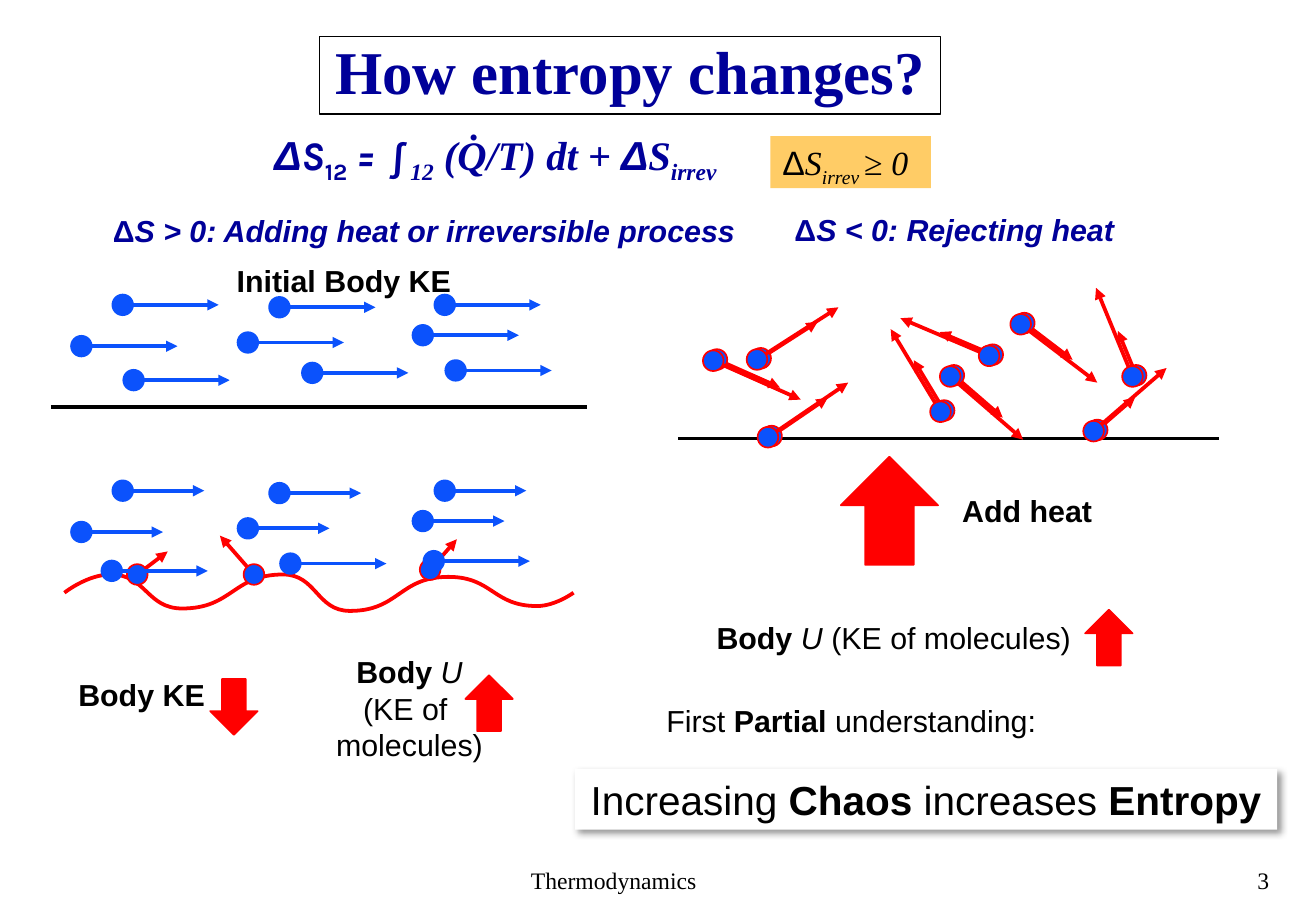
"""Build the slide on how entropy changes, with moving molecules above a surface."""
from dataclasses import dataclass
from functools import partial
from itertools import pairwise
from typing import NamedTuple, Optional

from lxml import etree
from pptx import Presentation
from pptx import util as u
from pptx.dml import color
from pptx.enum import shapes, text
from pptx.oxml import ns


@dataclass(frozen=True)
class Theme:
    black: str = "000000"
    white: str = "FFFFFF"
    navy: str = "000099"
    amber: str = "FFCC66"
    blue: str = "0B52FC"
    red: str = "FF0000"
    sans: str = "Arial"
    serif: str = "Times New Roman"
    rounded: str = "Karla"
    footer: int = 14
    label: int = 18
    condition: int = 20
    formula: int = 24
    title: int = 36
    thin: float = 1
    thick: float = 2.25
    dot: float = 0.17


THEME = Theme()


class Run(NamedTuple):
    words: str
    bold: bool = False
    italic: bool = False
    subscript: bool = False
    face: str = THEME.sans


class Point(NamedTuple):
    x: float
    y: float


class Molecule(NamedTuple):
    x: float
    y: float
    reach_x: float
    reach_y: float = 0

    def moved(self, right: float, down: float, speed: float = 1) -> "Molecule":
        return Molecule(self.x + right, self.y + down, self.reach_x * speed, self.reach_y * speed)


class Heating(NamedTuple):
    hot: Molecule
    cold_speed: float


class BlockArrow(NamedTuple):
    kind: shapes.MSO_SHAPE
    left: float
    top: float
    width: float = 0.39
    height: float = 0.46


@dataclass(frozen=True)
class Label:
    left: float
    top: float
    width: float
    height: float
    paragraphs: list[list[Run]]
    size: int = THEME.label
    ink: str = THEME.black
    centred: bool = False
    fill: Optional[str] = None
    border: Optional[str] = None
    middle: bool = False
    spacing: Optional[float] = None
    raised: bool = False


def rgb(value: str) -> color.RGBColor:
    return color.RGBColor.from_string(value)


def paint(shape, fill: Optional[str], border: Optional[str], width: float = THEME.thin) -> None:
    shape.shadow.inherit = False
    if fill:
        shape.fill.solid()
        shape.fill.fore_color.rgb = rgb(fill)
    else:
        shape.fill.background()
    if border:
        shape.line.color.rgb = rgb(border)
        shape.line.width = u.Pt(width)
    else:
        shape.line.fill.background()


def add_shadow(shape) -> None:
    effects = shape._element.spPr.find(ns.qn("a:effectLst"))
    shadow = etree.SubElement(effects, ns.qn("a:outerShdw"), blurRad=str(u.Pt(4)),
                              dist=str(u.Pt(3)), dir="2700000", algn="tl", rotWithShape="0")
    tone = etree.SubElement(shadow, ns.qn("a:srgbClr"), val=THEME.black)
    etree.SubElement(tone, ns.qn("a:alpha"), val="40000")


def add_label(slide, label: Label) -> None:
    frame = map(u.Inches, (label.left, label.top, label.width, label.height))
    if label.fill or label.border:
        box = slide.shapes.add_shape(shapes.MSO_SHAPE.RECTANGLE, *frame)
        paint(box, label.fill, label.border)
    else:
        box = slide.shapes.add_textbox(*frame)
    if label.raised:
        add_shadow(box)
    body = box.text_frame
    body.word_wrap = False
    body.auto_size = text.MSO_AUTO_SIZE.SHAPE_TO_FIT_TEXT
    body.vertical_anchor = text.MSO_ANCHOR.MIDDLE if label.middle else text.MSO_ANCHOR.TOP
    for index, runs in enumerate(label.paragraphs):
        paragraph = body.add_paragraph() if index else body.paragraphs[0]
        paragraph.alignment = text.PP_ALIGN.CENTER if label.centred else text.PP_ALIGN.LEFT
        paragraph.line_spacing = label.spacing
        for part in runs:
            run = paragraph.add_run()
            run.text = part.words
            run.font.name, run.font.size = part.face, u.Pt(label.size)
            run.font.bold, run.font.italic = part.bold, part.italic
            run.font.color.rgb = rgb(label.ink)
            if part.subscript:
                run._r.get_or_add_rPr().set("baseline", "-25000")


def add_line(slide, start: Point, end: Point, ink: str, arrow: bool = False) -> None:
    line = slide.shapes.add_connector(
        shapes.MSO_CONNECTOR.STRAIGHT, *map(u.Inches, (*start, *end)))
    line.line.color.rgb = rgb(ink)
    line.line.width = u.Pt(THEME.thick)
    if arrow:
        etree.SubElement(line.line._get_or_add_ln(), ns.qn("a:tailEnd"), type="triangle")
    etree.SubElement(line._element.spPr, ns.qn("a:effectLst"))


def add_molecule(slide, molecule: Molecule, ink: str) -> None:
    x, y, reach_x, reach_y = molecule
    add_line(slide, Point(x, y), Point(x + reach_x, y + reach_y), ink, arrow=True)
    corner = (x - THEME.dot / 2, y - THEME.dot / 2)
    dot = slide.shapes.add_shape(
        shapes.MSO_SHAPE.OVAL, *map(u.Inches, (*corner, THEME.dot, THEME.dot)))
    paint(dot, THEME.blue, ink)


def add_wave(slide, turns: list[Point], ink: str) -> None:
    """Join crests and troughs with curves that are level at each inner turn."""
    controls: list[Point] = []
    for start, end in pairwise(turns):
        half = (end.x - start.x) / 2
        leave = start if start == turns[0] else Point(start.x + half, start.y)
        arrive = end if end == turns[-1] else Point(end.x - half, end.y)
        controls += [leave, arrive, end]
    builder = slide.shapes.build_freeform(*map(u.Inches, turns[0]))
    builder.add_line_segments([tuple(map(u.Inches, point)) for point in controls], close=False)
    wave = builder.convert_to_shape()
    paint(wave, None, ink, THEME.thick)
    outline = next(wave._element.iter(ns.qn("a:path")))
    segments = outline.findall(ns.qn("a:lnTo"))
    for first in range(0, len(segments), 3):
        bezier = etree.SubElement(outline, ns.qn("a:cubicBezTo"))
        for segment in segments[first:first + 3]:
            bezier.append(segment[0])
            outline.remove(segment)


def add_block_arrow(slide, arrow: BlockArrow) -> None:
    block = slide.shapes.add_shape(arrow.kind, *map(u.Inches, arrow[1:]))
    paint(block, THEME.red, THEME.red)


COOL_FLOOR = (Point(0.42, 3.35), Point(4.83, 3.35))
HOT_FLOOR = (Point(5.58, 3.61), Point(10.03, 3.61))

FREE_FLOW = [Molecule(x, y, 0.79) for x, y in [
    (0.67, 2.85), (1.01, 2.51), (2.04, 2.82), (2.3, 2.53), (3.48, 2.76), (3.66, 2.51)]]
FLOW_AT_FLOOR = [Molecule(x, y, 0.79) for x, y in [(1.1, 3.13), (2.57, 3.07), (3.75, 3.05)]]
SLOWED_FLOW = [molecule.moved(0, 1.53, speed=0.85) for molecule in FREE_FLOW]
FLOW_AT_WAVE = [molecule.moved(-0.18, 1.57) for molecule in FLOW_AT_FLOOR]

WAVE_TURNS = [Point(0.53, 4.88), Point(0.91, 4.73), Point(1.5, 5.01), Point(2.33, 4.73),
              Point(2.88, 5.03), Point(3.69, 4.75), Point(4.42, 4.99), Point(4.72, 4.88)]
WAVE_MOLECULES = [Molecule(3.54, 4.69, 0.22, -0.25), Molecule(1.13, 4.73, 0.25, -0.19),
                  Molecule(2.09, 4.73, -0.28, -0.32)]

HEATINGS = [
    Heating(Molecule(5.87, 2.97, 0.72, 0.32), 0.72),
    Heating(Molecule(6.32, 3.6, 0.66, -0.45), 0.7),
    Heating(Molecule(6.23, 2.96, 0.67, -0.43), 0.7),
    Heating(Molecule(7.74, 3.39, -0.41, -0.68), 0.61),
    Heating(Molecule(7.82, 3.1, 0.6, 0.52), 0.67),
    Heating(Molecule(8.14, 2.93, -0.73, -0.31), 0.6),
    Heating(Molecule(9, 3.55, 0.6, -0.52), 0.52),
    Heating(Molecule(8.4, 2.67, 0.63, 0.48), 0.63),
    Heating(Molecule(9.32, 3.1, -0.3, -0.73), 0.5)]
COLD_MOLECULES = [heating.hot.moved(0.03, -0.01, heating.cold_speed) for heating in HEATINGS]
HOT_MOLECULES = [heating.hot for heating in HEATINGS]

rise = partial(BlockArrow, shapes.MSO_SHAPE.UP_ARROW)
fall = partial(BlockArrow, shapes.MSO_SHAPE.DOWN_ARROW)
BLOCK_ARROWS = [rise(6.92, 3.76, 0.8, 0.89), rise(3.83, 5.56), fall(1.73, 5.59), rise(8.93, 5.02)]

bold = partial(Run, bold=True)
italic = partial(Run, italic=True)
strong = partial(Run, bold=True, italic=True)
serif = partial(Run, face=THEME.serif)
serif_italic = partial(italic, face=THEME.serif)
serif_strong = partial(strong, face=THEME.serif)

TITLE = [serif("How entropy changes?", bold=True)]
CONDITION = [Run("Δ"), serif_italic("S"), serif_italic("irrev ", subscript=True),
             serif("≥ "), serif_italic("0")]
BALANCE = [strong("Δ"), strong("S", face=THEME.rounded),
           bold("12", subscript=True, face=THEME.rounded), strong(" = ∫", face=THEME.rounded),
           serif_strong("12", subscript=True), serif_strong(" (Q̇/T) dt + "), strong("Δ"),
           serif_strong("S"), serif_strong("irrev", subscript=True)]
GAIN = [bold("Δ"), strong("S > 0: Adding heat or irreversible process")]
LOSS = [bold("Δ"), strong("S < 0: Rejecting heat")]
WAVE_ENERGY = [[bold("Body "), italic("U")], [Run("(KE of ")], [Run("molecules)")]]
HEAT_ENERGY = [bold("Body "), italic("U "), Run("(KE of molecules)")]
LEAD_IN = [Run("First"), bold(" Partial "), Run("understanding:")]
CONCLUSION = [Run("Increasing"), bold(" Chaos "), Run("increases "), bold("Entropy")]

LABELS = [
    Label(4.27, 7.08, 1.58, 0.34, [[serif("Thermodynamics")]], THEME.footer),
    Label(10.25, 7.08, 0.43, 0.33, [[serif("3")]], THEME.footer),
    Label(2.63, 0.3, 5.11, 0.64, [TITLE], THEME.title, THEME.navy, centred=True,
          border=THEME.black, middle=True, spacing=0.9),
    Label(2.16, 1.02, 3.87, 0.5, [BALANCE], THEME.formula, THEME.navy),
    Label(6.34, 1.12, 1.32, 0.43, [CONDITION], THEME.condition, fill=THEME.amber),
    Label(0.83, 1.7, 5.35, 0.4, [GAIN], ink=THEME.navy),
    Label(6.44, 1.69, 2.9, 0.4, [LOSS], ink=THEME.navy),
    Label(1.84, 2.11, 1.98, 0.4, [[bold("Initial Body KE")]], centred=True),
    Label(7.82, 4, 1.28, 0.4, [[bold("Add heat")]]),
    Label(0.54, 5.52, 1.25, 0.4, [[bold("Body KE")]], centred=True),
    Label(2.66, 5.33, 1.42, 1.01, WAVE_ENERGY, centred=True),
    Label(5.78, 5.05, 3.15, 0.4, [HEAT_ENERGY], centred=True),
    Label(5.37, 5.73, 3.27, 0.4, [LEAD_IN], centred=True),
    Label(4.73, 6.33, 5.78, 0.5, [CONCLUSION], THEME.formula, centred=True,
          fill=THEME.white, raised=True)]


def main() -> None:
    deck = Presentation()
    deck.slide_width, deck.slide_height = u.Inches(10.83), u.Inches(7.5)
    slide = deck.slides.add_slide(deck.slide_layouts[6])
    for floor in (COOL_FLOOR, HOT_FLOOR):
        add_line(slide, *floor, THEME.black)
    add_wave(slide, WAVE_TURNS, THEME.red)
    for molecule in WAVE_MOLECULES + COLD_MOLECULES + HOT_MOLECULES:
        add_molecule(slide, molecule, THEME.red)
    for molecule in FREE_FLOW + FLOW_AT_FLOOR + SLOWED_FLOW + FLOW_AT_WAVE:
        add_molecule(slide, molecule, THEME.blue)
    for arrow in BLOCK_ARROWS:
        add_block_arrow(slide, arrow)
    for label in LABELS:
        add_label(slide, label)
    deck.save("out.pptx")


if __name__ == "__main__":
    main()
